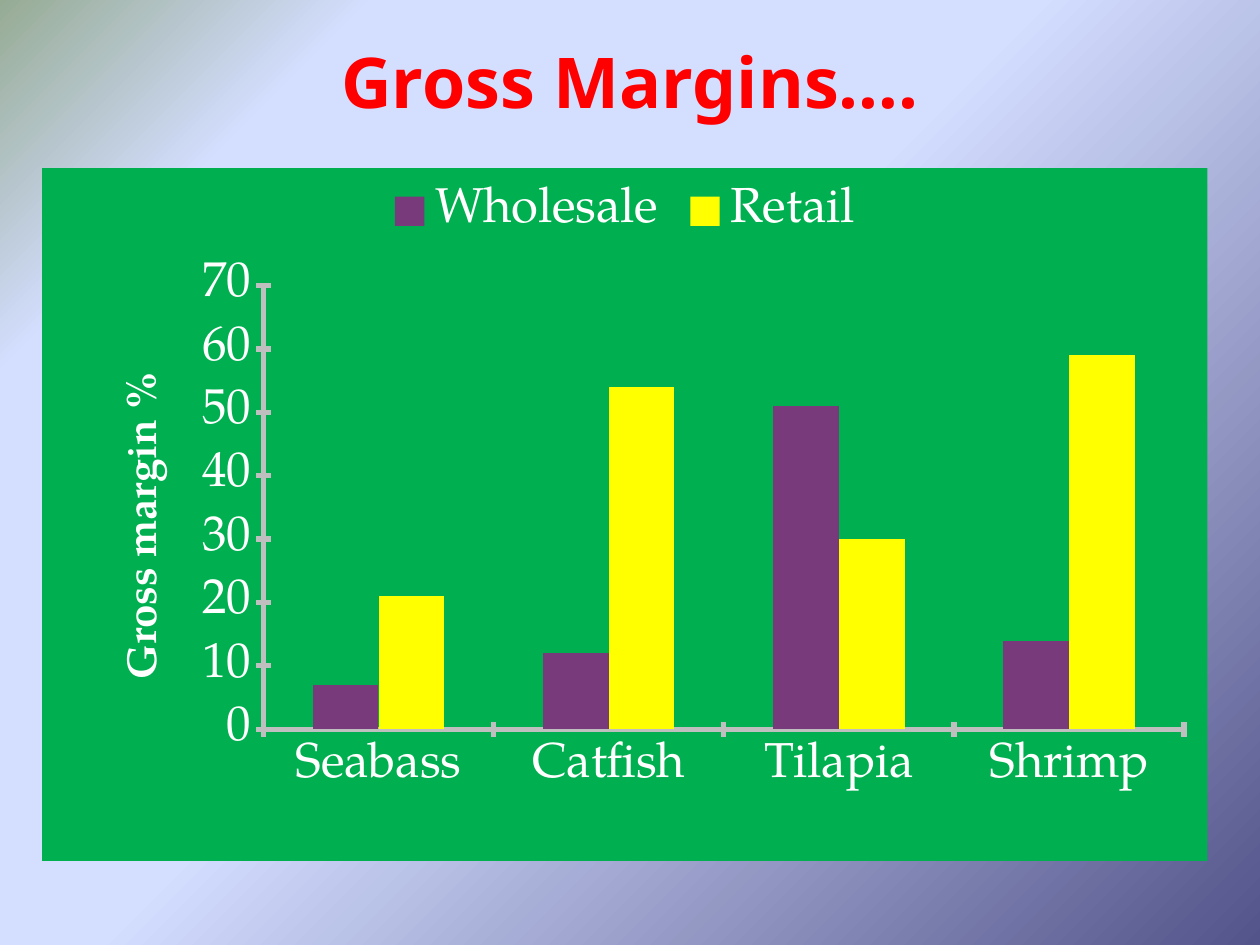
import pptx
import pptx.chart.data
import pptx.dml.color
import pptx.enum.chart
import pptx.enum.text
import pptx.oxml
import pptx.oxml.ns
import pptx.util
from pptx.util import Pt

COLORS = {
    "title": "FF0000",
    "text": "FFFFFF",
    "panel": "00B050",
    "wholesale": "783A7A",
    "retail": "FFFF00",
    "axis": "BFBFBF",
    "green": "96AB94",
    "pale": "D4DEFF",
    "purple": "53548A",
}
TITLE_FONT = "Noto Sans"
CHART_FONT = "TeX Gyre Pagella"
CATEGORIES = ["Seabass", "Catfish", "Tilapia", "Shrimp"]
SERIES = [
    ("Wholesale", [7, 12, 51, 14], "wholesale"),
    ("Retail", [21, 54, 30, 59], "retail"),
]
BACKGROUND_STOPS = [(0, "green"), (17, "pale"), (47, "pale"), (100, "purple")]
PLOT_AREA = {"x": 0.19, "y": 0.17, "w": 0.79, "h": 0.64}


def color(name):
    return pptx.dml.color.RGBColor.from_string(COLORS[name])


def format_font(font, name, size, color_name, bold=False):
    font.name = name
    font.size = Pt(size)
    font.bold = bold
    font.color.rgb = color(color_name)


def paint(fill, color_name):
    fill.solid()
    fill.fore_color.rgb = color(color_name)


def set_background(slide):
    fill = slide.background.fill
    fill.gradient()
    fill.gradient_angle = 315
    stop_list = slide.element.find(".//" + pptx.oxml.ns.qn("a:gsLst"))
    for stop in list(stop_list):
        stop_list.remove(stop)
    for position, name in BACKGROUND_STOPS:
        stop_list.append(pptx.oxml.parse_xml(
            f'<a:gs {pptx.oxml.ns.nsdecls("a")} pos="{position * 1000}">'
            f'<a:srgbClr val="{COLORS[name]}"/></a:gs>'))


def add_title(slide, text):
    title = slide.shapes.title
    title.left, title.top, title.width, title.height = Pt(36), Pt(18), Pt(648), Pt(56)
    frame = title.text_frame
    frame.vertical_anchor = pptx.enum.text.MSO_ANCHOR.MIDDLE
    paragraph = frame.paragraphs[0]
    paragraph.alignment = pptx.enum.text.PP_ALIGN.CENTER
    run = paragraph.add_run()
    run.text = text
    format_font(run.font, TITLE_FONT, 40, "title", bold=True)


def format_axis(axis):
    axis.has_major_gridlines = False
    axis.major_tick_mark = pptx.enum.chart.XL_TICK_MARK.CROSS
    axis.minor_tick_mark = pptx.enum.chart.XL_TICK_MARK.NONE
    axis.format.line.color.rgb = color("axis")
    axis.format.line.width = Pt(3)
    format_font(axis.tick_labels.font, CHART_FONT, 28, "text")


def format_value_axis(axis, text):
    format_axis(axis)
    axis.minimum_scale, axis.maximum_scale, axis.major_unit = 0, 70, 10
    run = axis.axis_title.text_frame.paragraphs[0].add_run()
    run.text = text
    format_font(run.font, CHART_FONT, 24, "text", bold=True)


def format_legend(chart):
    chart.has_legend = True
    chart.legend.position = pptx.enum.chart.XL_LEGEND_POSITION.TOP
    chart.legend.include_in_layout = False
    format_font(chart.legend.font, CHART_FONT, 28, "text")


def fill_chart_area(chart):
    chart_space = chart.element
    properties = pptx.oxml.parse_xml(
        f'<c:spPr {pptx.oxml.ns.nsdecls("c", "a")}><a:solidFill>'
        f'<a:srgbClr val="{COLORS["panel"]}"/></a:solidFill>'
        '<a:ln><a:noFill/></a:ln></c:spPr>')
    chart_space.find(pptx.oxml.ns.qn("c:chart")).addnext(properties)


def place_plot(chart):
    plot_area = chart.element.find(".//" + pptx.oxml.ns.qn("c:plotArea"))
    layout = plot_area.find(pptx.oxml.ns.qn("c:layout"))
    if layout is not None:
        plot_area.remove(layout)
    modes = "".join(f'<c:{key}Mode val="edge"/>' for key in "xy")
    sizes = "".join(f'<c:{key} val="{value}"/>' for key, value in PLOT_AREA.items())
    plot_area.insert(0, pptx.oxml.parse_xml(
        f'<c:layout {pptx.oxml.ns.nsdecls("c")}><c:manualLayout>'
        f'<c:layoutTarget val="inner"/>{modes}{sizes}</c:manualLayout></c:layout>'))


def add_margin_chart(slide):
    data = pptx.chart.data.CategoryChartData()
    data.categories = CATEGORIES
    for name, values, _ in SERIES:
        data.add_series(name, values)
    chart = slide.shapes.add_chart(
        pptx.enum.chart.XL_CHART_TYPE.COLUMN_CLUSTERED,
        Pt(24), Pt(96), Pt(666), Pt(396), data).chart
    chart.has_title = False
    format_font(chart.font, CHART_FONT, 10, "text")
    plot = chart.plots[0]
    plot.gap_width = 150
    plot.overlap = 0
    plot.vary_by_categories = False
    for series, (_, _, color_name) in zip(plot.series, SERIES):
        paint(series.format.fill, color_name)
    format_axis(chart.category_axis)
    format_value_axis(chart.value_axis, "Gross margin %")
    format_legend(chart)
    fill_chart_area(chart)
    place_plot(chart)


def main():
    presentation = pptx.Presentation()
    presentation.slide_width, presentation.slide_height = Pt(720), Pt(540)
    slide = presentation.slides.add_slide(presentation.slide_layouts[5])
    set_background(slide)
    add_title(slide, "Gross Margins….")
    add_margin_chart(slide)
    presentation.save("out.pptx")


if __name__ == "__main__":
    main()
